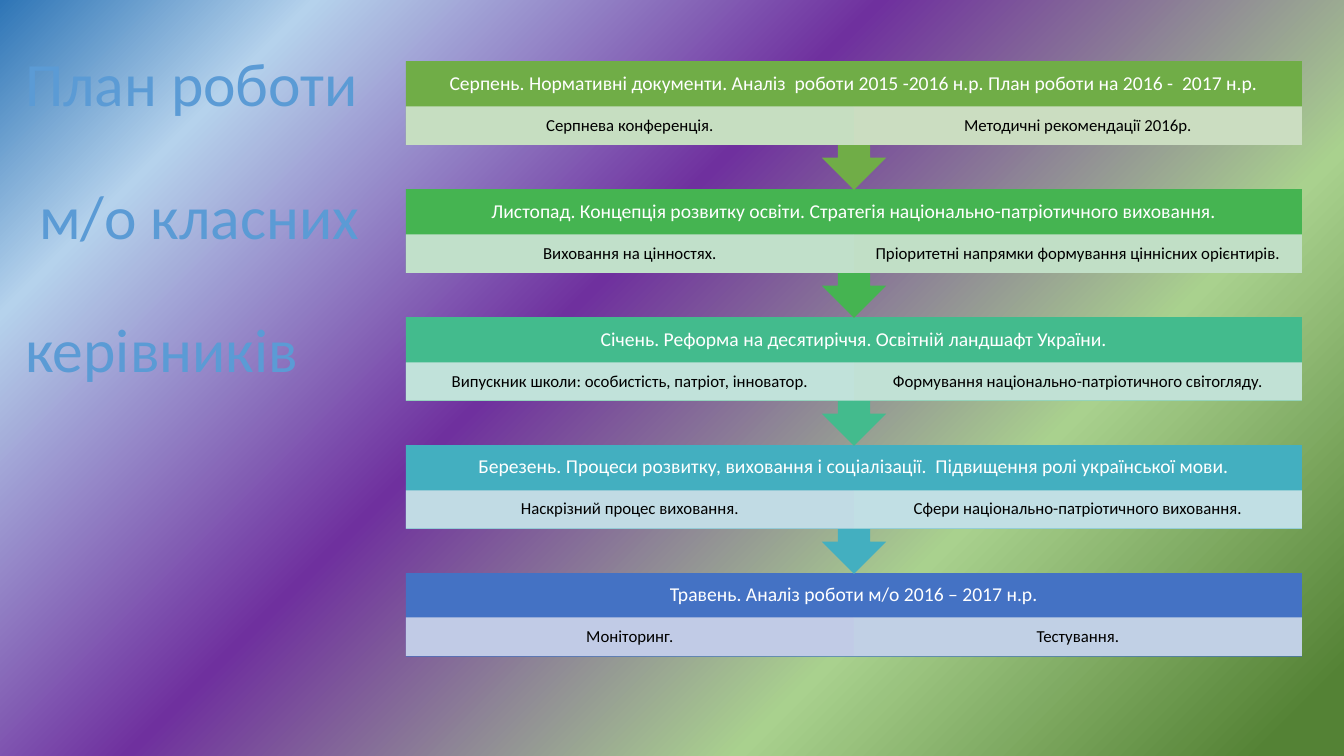
from dataclasses import dataclass

from lxml import etree
from pptx import Presentation
from pptx.dml.color import RGBColor
from pptx.enum.shapes import MSO_SHAPE
from pptx.enum.text import MSO_ANCHOR, MSO_AUTO_SIZE, PP_ALIGN
from pptx.oxml.ns import qn
from pptx.util import Cm, Pt

RECT, CALLOUT = MSO_SHAPE.RECTANGLE, MSO_SHAPE.UP_ARROW_CALLOUT
MIDDLE, NO_FIT = MSO_ANCHOR.MIDDLE, MSO_AUTO_SIZE.NONE
LEFT, CENTER = PP_ALIGN.LEFT, PP_ALIGN.CENTER


@dataclass(frozen=True)
class Theme:
    """Colours, font and type sizes of the slide."""
    font: str = "Calibri"
    title: str = "5B9BD5"
    light: str = "FFFFFF"
    dark: str = "000000"
    title_size: int = 44
    head_size: int = 14
    cell_size: int = 12
    cell_alpha: int = 90
    backdrop: tuple = ((4, "548235"), (29, "A9D18E"), (58, "6F309E"),
                       (85, "B5D2EC"), (100, "2E75B6"))


THEME = Theme()
TITLE = "План роботи \v м/о класних \vкерівників"
MONTHS = [
    ("70AD47", "Серпень. Нормативні документи. Аналіз  роботи 2015 -2016 н.р. "
     "План роботи на 2016 -  2017 н.р.",
     [("D0E4CF", "Серпнева конференція."),
      ("D5E3CF", "Методичні рекомендації 2016р.")]),
    ("45B451", "Листопад. Концепція розвитку освіти. "
     "Стратегія національно-патріотичного виховання.",
     [("CFE5D8", "Виховання на цінностях."),
      ("CFE4D3", "Пріоритетні напрямки формування ціннісних орієнтирів.")]),
    ("43BB8D", "Січень. Реформа на десятиріччя. Освітній ландшафт України.",
     [("CFE7E3", "Випускник школи: особистість, патріот, інноватор."),
      ("CFE6DD", "Формування національно-патріотичного світогляду.")]),
    ("43AFC0", "Березень. Процеси розвитку, виховання і соціалізації.  "
     "Підвищення ролі української мови.",
     [("CFE0E8", "Наскрізний процес виховання."),
      ("CFE5E8", "Сфери національно-патріотичного виховання.")]),
    ("4472C4", "Травень. Аналіз роботи м/о 2016 – 2017 н.р.",
     [("CFD5EA", "Моніторинг."), ("CFDBE9", "Тестування.")]),
]


def set_format(target, values):
    """Set each attribute in values on target."""
    for name, value in values.items():
        setattr(target, name, value)


def write(sp, text, size, color, align, **frame):
    """Put formatted text into a shape."""
    tf = sp.text_frame
    set_format(tf, {"word_wrap": True, "auto_size": NO_FIT,
                    "vertical_anchor": MIDDLE, **frame})
    p = tf.paragraphs[0]
    p.text = text
    set_format(p, {"alignment": align, "line_spacing": 0.9})
    for r in p.runs:
        set_format(r.font, {"name": THEME.font, "size": Pt(size)})
        r.font.color.rgb = RGBColor.from_string(color)


def add_block(shapes, kind, box, color, alpha=100):
    """Add a flat filled shape without outline or shadow."""
    sp = shapes.add_shape(kind, *map(Cm, box))
    sp.shadow.inherit = False
    sp.line.fill.background()
    sp.fill.solid()
    sp.fill.fore_color.rgb = RGBColor.from_string(color)
    if alpha < 100:
        clr = sp.fill._xPr.find(".//" + qn("a:srgbClr"))
        etree.SubElement(clr, qn("a:alpha"), val=str(alpha * 1000))
    return sp


def add_backdrop(s):
    """Fill the background with a gradient that starts at the lower right corner."""
    s.background.fill.gradient()
    grad = s.element.find(".//" + qn("a:gradFill"))
    for child in list(grad):
        grad.remove(child)
    stops = etree.SubElement(grad, qn("a:gsLst"))
    for pos, color in THEME.backdrop:
        gs = etree.SubElement(stops, qn("a:gs"), pos=str(pos * 1000))
        etree.SubElement(gs, qn("a:srgbClr"), val=color)
    route = etree.SubElement(grad, qn("a:path"), path="circle")
    etree.SubElement(route, qn("a:fillToRect"), l="100000", t="100000")
    etree.SubElement(grad, qn("a:tileRect"), r="-100000", b="-100000")


def add_title(s, x, y, w, h):
    """Place and format the title placeholder."""
    sp = s.shapes.title
    set_format(sp, {"left": Cm(x), "top": Cm(y), "width": Cm(w), "height": Cm(h)})
    write(sp, TITLE, THEME.title_size, THEME.title, LEFT)


def add_month(shapes, month, x, y, w, h, kind, head_h):
    """Add one month: its block, its heading and its row of cells."""
    color, heading, cells = month
    block = add_block(shapes, kind, (x, y, w, h), color)
    if kind == CALLOUT:
        block.rotation = 180
    tb = shapes.add_textbox(*map(Cm, (x, y, w, head_h)))
    write(tb, heading, THEME.head_size, THEME.light, CENTER)
    cell_w, cell_h = w / len(cells), 0.97
    for i, (tint, text) in enumerate(cells):
        box = (x + i * cell_w, y + head_h, cell_w, cell_h)
        cell = add_block(shapes, RECT, box, tint, THEME.cell_alpha)
        write(cell, text, THEME.cell_size, THEME.dark, CENTER,
              margin_top=Cm(0.05), margin_bottom=Cm(0.05))


def add_plan(s, x, y, w, h):
    """Stack the months from top to bottom, each pointing to the next."""
    shapes = s.shapes.add_group_shape().shapes
    last = len(MONTHS) - 1
    last_h = 2.11
    pitch = (h - last_h) / last
    for i in range(last, -1, -1):
        kind, block_h, head_h = ((RECT, last_h, 1.12) if i == last
                                 else (CALLOUT, pitch + 0.02, 1.14))
        add_month(shapes, MONTHS[i], x, y + i * pitch, w, block_h, kind, head_h)


def main():
    """Build the slide and save it."""
    prs = Presentation()
    set_format(prs, {"slide_width": Cm(33.87), "slide_height": Cm(19.05)})
    s = prs.slides.add_slide(prs.slide_layouts[5])
    add_backdrop(s)
    add_title(s, 0.38, 0.28, 9.19, 10.49)
    add_plan(s, 10.23, 1.54, 22.58, 15.01)
    prs.save("out.pptx")


if __name__ == "__main__":
    main()
